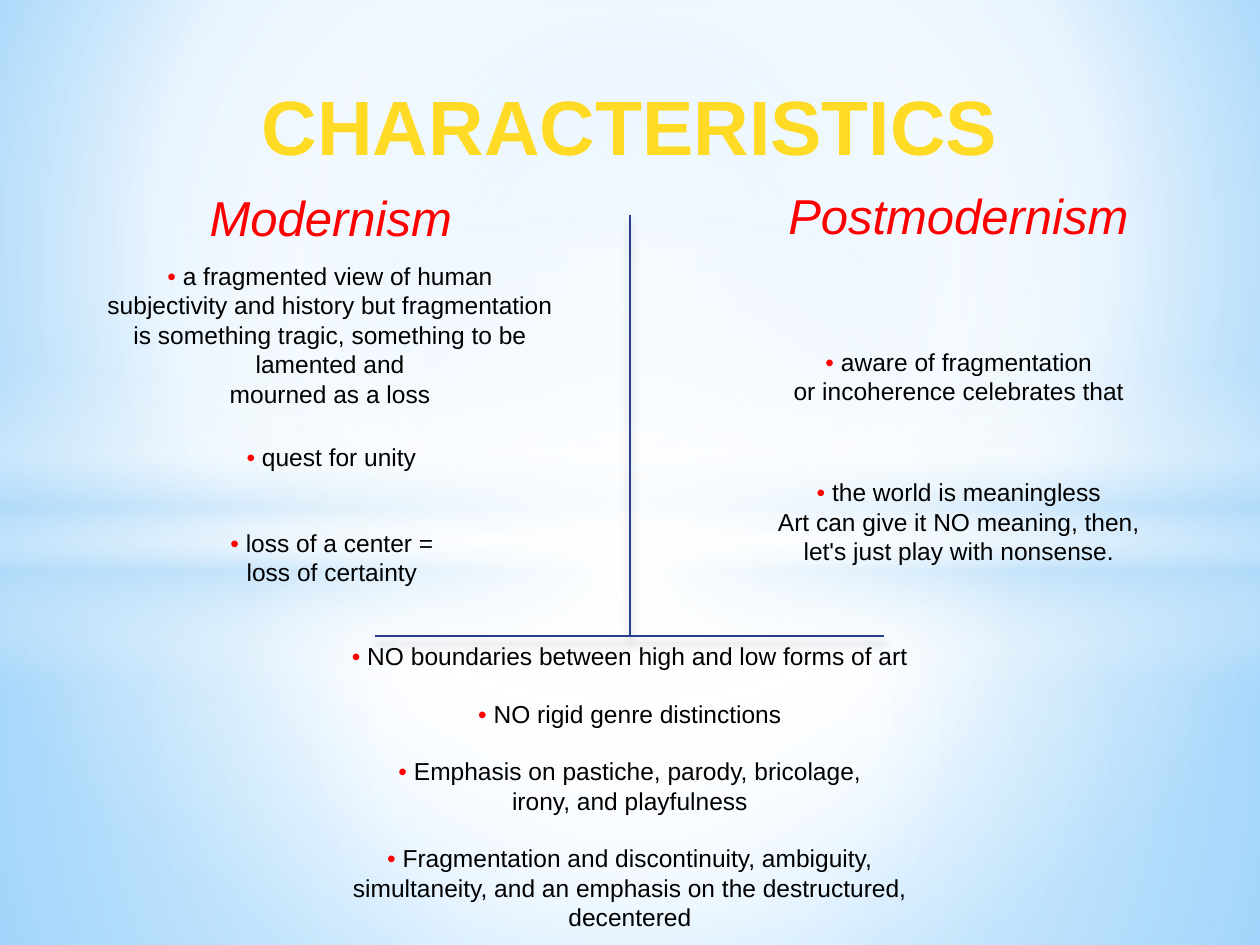
from dataclasses import dataclass
from pptx import Presentation
from pptx.dml.color import RGBColor as Rgb
from pptx.enum.shapes import MSO_CONNECTOR as Link, MSO_SHAPE as Kind
from pptx.enum.text import MSO_ANCHOR as Anchor, MSO_AUTO_SIZE as Fit, PP_ALIGN as Align
from pptx.oxml import parse_xml
from pptx.oxml.ns import nsdecls
from pptx.util import Inches, Pt


@dataclass(frozen=True)
class Theme:
    font: str = "Arial"
    gold: str = "FFDB26"
    red: str = "FF0000"
    ink: str = "000000"
    rule: str = "2A3E8E"
    white: str = "FFFFFF"
    sky: str = "B4DCFA"
    title: int = 44
    head: int = 28
    body: int = 14
    gap: float = 16.1


LOOK = Theme()
COLS, ROWS = 100, 75
UNIT = Inches(10) / COLS
MID = (50, 50, 50, 50)


def span(*cells):
    return [round(c * UNIT) for c in cells]


def within(box, x, y, w, h):
    return box[0] + x, box[1] + y, w, h


def fade(node, stops, to=None):
    marks = "".join(
        f'<a:gs pos="{pos * 1000}"><a:srgbClr val="{tint}">'
        f'<a:alpha val="{alpha * 1000}"/></a:srgbClr></a:gs>'
        for pos, tint, alpha in stops)
    if to:
        edge = " ".join(f'{k}="{v * 1000}"' for k, v in zip("ltrb", to))
        way = f'<a:path path="circle"><a:fillToRect {edge}/></a:path>'
    else:
        way = '<a:lin ang="5400000" scaled="0"/>'
    old = node.xpath(".//a:solidFill")[0]
    old.getparent().replace(old, parse_xml(
        f'<a:gradFill {nsdecls("a")} rotWithShape="1">'
        f"<a:gsLst>{marks}</a:gsLst>{way}</a:gradFill>"))


def backdrop(slide, box):
    slide.background.fill.solid()
    fade(slide._element.cSld.bg,
         [(0, "9ED5FF", 100), (60, LOOK.white, 100), (100, "5BB9FF", 100)],
         (20, 10, 20, 60))
    wide = box[2]
    white, sky = LOOK.white, LOOK.sky
    layers = [
        (Kind.RECTANGLE, (0, 42.3, wide, 32.7), MID,
         [(0, white, 91), (37, white, 76), (100, sky, 79)]),
        (Kind.RECTANGLE, (0, 0, wide, 42.3), MID,
         [(0, white, 89), (48, white, 62), (100, sky, 79)]),
        (Kind.RECTANGLE, (0, 29, wide, 25), None,
         [(0, white, 0), (29, white, 30), (45, sky, 40),
          (55, white, 26), (65, sky, 60), (100, white, 0)]),
        (Kind.OVAL, (0, 17.5, wide, 55.8), MID,
         [(0, white, 100), (54, white, 0)]),
    ]
    for spot, (kind, part, to, stops) in enumerate(layers, 2):
        shape = slide.shapes.add_shape(kind, *span(*within(box, *part)))
        shape.shadow.inherit = False
        shape.line.fill.background()
        shape.fill.solid()
        fade(shape._element, stops, to)
        slide.shapes._spTree.insert(spot, shape._element)


def write(shape, box, items, size=LOOK.body, color=LOOK.ink,
          bold=False, italic=False, wrap=True):
    shape.left, shape.top, shape.width, shape.height = span(*box)
    frame = shape.text_frame
    frame.word_wrap = wrap
    frame.auto_size = Fit.SHAPE_TO_FIT_TEXT
    frame.vertical_anchor = Anchor.TOP
    lines = [(line, i > 0 and j == 0)
             for i, item in enumerate(items) for j, line in enumerate(item)]
    for n, (line, apart) in enumerate(lines):
        para = frame.add_paragraph() if n else frame.paragraphs[0]
        props = para._p.get_or_add_pPr()
        props.set("marL", "0")
        props.set("indent", "0")
        props.append(parse_xml(f'<a:buNone {nsdecls("a")}/>'))
        para.alignment = Align.CENTER
        para.space_before = Pt(LOOK.gap if apart else 0)
        dot, rest = (line[:2], line[2:]) if line.startswith("•") else ("", line)
        for text, tint in ((dot, LOOK.red), (rest, color)):
            if text:
                run = para.add_run()
                run.text = text
                font = run.font
                font.name, font.size = LOOK.font, Pt(size)
                font.bold, font.italic = bold, italic
                font.color.rgb = Rgb.from_string(tint)


def column(slide, box, slot, head, notes):
    label, part = head
    write(slide.placeholders[slot], within(box, *part), [[label]],
          size=LOOK.head, color=LOOK.red, italic=True)
    for n, (part, wrap, lines) in enumerate(notes):
        shape = (slide.shapes.add_textbox(0, 0, 1, 1) if n
                 else slide.placeholders[slot + 1])
        write(shape, within(box, *part), [lines], wrap=wrap)


def rules(slide, box):
    x, y, w, h = box
    for ends in ((x + w / 2, y, x + w / 2, y + h), (x + w, y + h, x, y + h)):
        line = slide.shapes.add_connector(Link.STRAIGHT, *span(*ends))
        line.line.color.rgb = Rgb.from_string(LOOK.rule)
        line.line.width = Pt(1.25)
        line._element.spPr.append(parse_xml(
            f'<a:effectLst {nsdecls("a")}>'
            f'<a:outerShdw blurRad="{Pt(5)}" dist="{Pt(4)}" dir="5400000">'
            f'<a:srgbClr val="{LOOK.ink}"><a:alpha val="20000"/></a:srgbClr>'
            "</a:outerShdw></a:effectLst>"))


def traits(slide, box, items):
    write(slide.shapes.add_textbox(0, 0, 1, 1), box, items)


def main():
    deck = Presentation()
    deck.slide_width, deck.slide_height = span(COLS, ROWS)
    slide = deck.slides.add_slide(deck.slide_layouts[4])
    backdrop(slide, (0, 0, COLS, ROWS))
    write(slide.shapes.title, (7.2, 5.7, 85.6, 8.4), [["CHARACTERISTICS"]],
          size=LOOK.title, color=LOOK.gold, bold=True)
    column(slide, (6.1, 14.4, 40.3, 35), 1,
           ("Modernism", (0, 0, 40.3, 5.7)), [
        ((1.1, 5.8, 38, 14.1), True,
         ["• a fragmented view of human",
          "subjectivity and history but fragmentation is something tragic, "
          "something to be lamented and",
          "mourned as a loss"]),
        ((12.3, 20.2, 15.8, 3.4), False, ["• quest for unity"]),
        ((11.1, 27, 18.3, 6.3), False,
         ["• loss of a center =", "loss of certainty"]),
    ])
    column(slide, (52.2, 14.2, 47.8, 35), 3,
           ("Postmodernism", (3.7, 0, 40.3, 5.7)), [
        ((9.7, 12.8, 28.4, 5.7), False,
         ["• aware of fragmentation", "or incoherence celebrates that"]),
        ((0, 23.2, 47.8, 8.1), True,
         ["• the world is meaningless",
          "Art can give it NO meaning, then,",
          "let's just play with nonsense."]),
    ])
    rules(slide, (29.8, 17.1, 40.4, 33.4))
    traits(slide, (25, 50.4, 50, 24.6), [
        ["• NO boundaries between high and low forms of art"],
        ["• NO rigid genre distinctions"],
        ["• Emphasis on pastiche, parody, bricolage,",
         "irony, and playfulness"],
        ["• Fragmentation and discontinuity, ambiguity, simultaneity, "
         "and an emphasis on the destructured, decentered"],
    ])
    deck.save("out.pptx")


if __name__ == "__main__":
    main()
